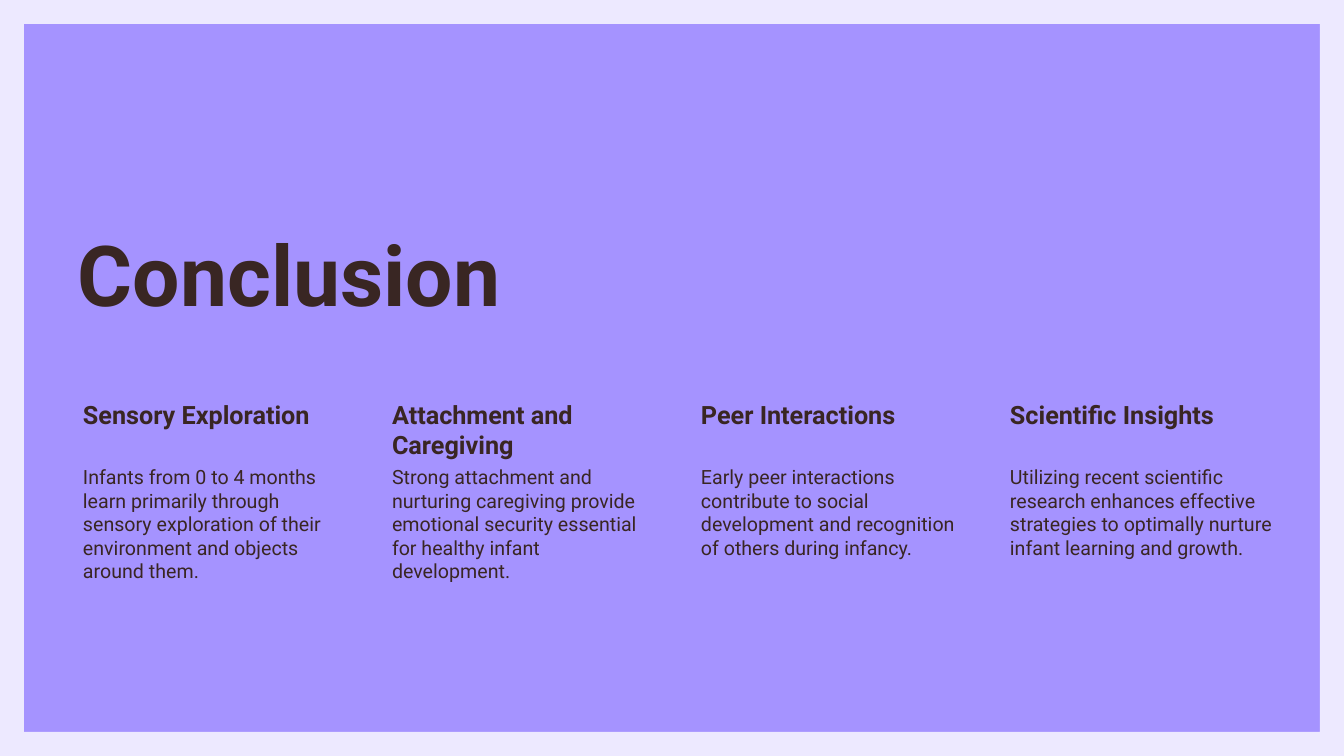
from pptx import Presentation
from pptx.dml.color import RGBColor
from pptx.enum.shapes import MSO_SHAPE
from pptx.enum.text import MSO_ANCHOR
from pptx.util import Emu, Pt

WIDTH, HEIGHT = 1344, 756
BORDER = 24
EMU_PER_PX = 12192000 / WIDTH
LEFT = 68
COLUMN_STEP, COLUMN_WIDTH = 309, 281
HEADING_TOP, HEADING_HEIGHT = 396, 67
BODY_HEIGHT = 235

TAKEAWAYS = [
    ("Sensory Exploration",
     "Infants from 0 to 4 months learn primarily through sensory exploration "
     "of their environment and objects around them."),
    ("Attachment and Caregiving",
     "Strong attachment and nurturing caregiving provide emotional security "
     "essential for healthy infant development."),
    ("Peer Interactions",
     "Early peer interactions contribute to social development and "
     "recognition of others during infancy."),
    ("Scientific Insights",
     "Utilizing recent scientific research enhances effective strategies to "
     "optimally nurture infant learning and growth."),
]


def px(length):
    return Emu(round(length * EMU_PER_PX))


def color(value):
    return RGBColor.from_string(value)


def apply_format(target, values):
    for name, value in values.items():
        setattr(target, name, value)


class SlideBuilder:
    """Hold the style and the current slide, and add elements to it."""

    font_name = "Roboto"
    text_color = "392623"
    background_color = "A593FF"
    border_color = "EDE9FF"

    def __init__(self, slide):
        self.slide = slide

    def background(self):
        fill = self.slide.background.fill
        fill.solid()
        fill.fore_color.rgb = color(self.background_color)

    def border(self, thickness):
        shape = self.slide.shapes.add_shape(
            MSO_SHAPE.FRAME, 0, 0, px(WIDTH), px(HEIGHT))
        shape.adjustments[0] = thickness / HEIGHT
        shape.shadow.inherit = False
        shape.fill.solid()
        shape.fill.fore_color.rgb = color(self.border_color)
        shape.line.fill.background()

    def text(self, words, box, insets, size, bold=False,
             anchor=MSO_ANCHOR.TOP, line_spacing=1.0):
        shape = self.slide.shapes.add_textbox(*map(px, box))
        frame = shape.text_frame
        sides = ("margin_left", "margin_top", "margin_right", "margin_bottom")
        apply_format(frame, {"word_wrap": True, "vertical_anchor": anchor,
                             **dict(zip(sides, map(px, insets)))})
        paragraph = frame.paragraphs[0]
        paragraph.line_spacing = line_spacing
        run = paragraph.add_run()
        run.text = words
        apply_format(run.font, {"name": self.font_name, "size": Pt(size),
                                "bold": bold})
        run.font.color.rgb = color(self.text_color)

    def takeaway(self, left, heading, body):
        self.text(heading, (left, HEADING_TOP, COLUMN_WIDTH, HEADING_HEIGHT),
                  (15, 3, 3, 3), 18, bold=True)
        self.text(body, (left, HEADING_TOP + HEADING_HEIGHT, COLUMN_WIDTH,
                         BODY_HEIGHT), (15, 2, 2, 2), 14)


def main():
    presentation = Presentation()
    presentation.slide_width = px(WIDTH)
    presentation.slide_height = px(HEIGHT)
    builder = SlideBuilder(
        presentation.slides.add_slide(presentation.slide_layouts[6]))
    builder.background()
    builder.border(BORDER)
    builder.text("Conclusion", (LEFT, 204, 809, 125), (10, 5, 10, 5), 60,
                 bold=True, anchor=MSO_ANCHOR.BOTTOM, line_spacing=0.85)
    for index, (heading, body) in enumerate(TAKEAWAYS):
        builder.takeaway(LEFT + index * COLUMN_STEP, heading, body)
    presentation.save("out.pptx")


if __name__ == "__main__":
    main()
